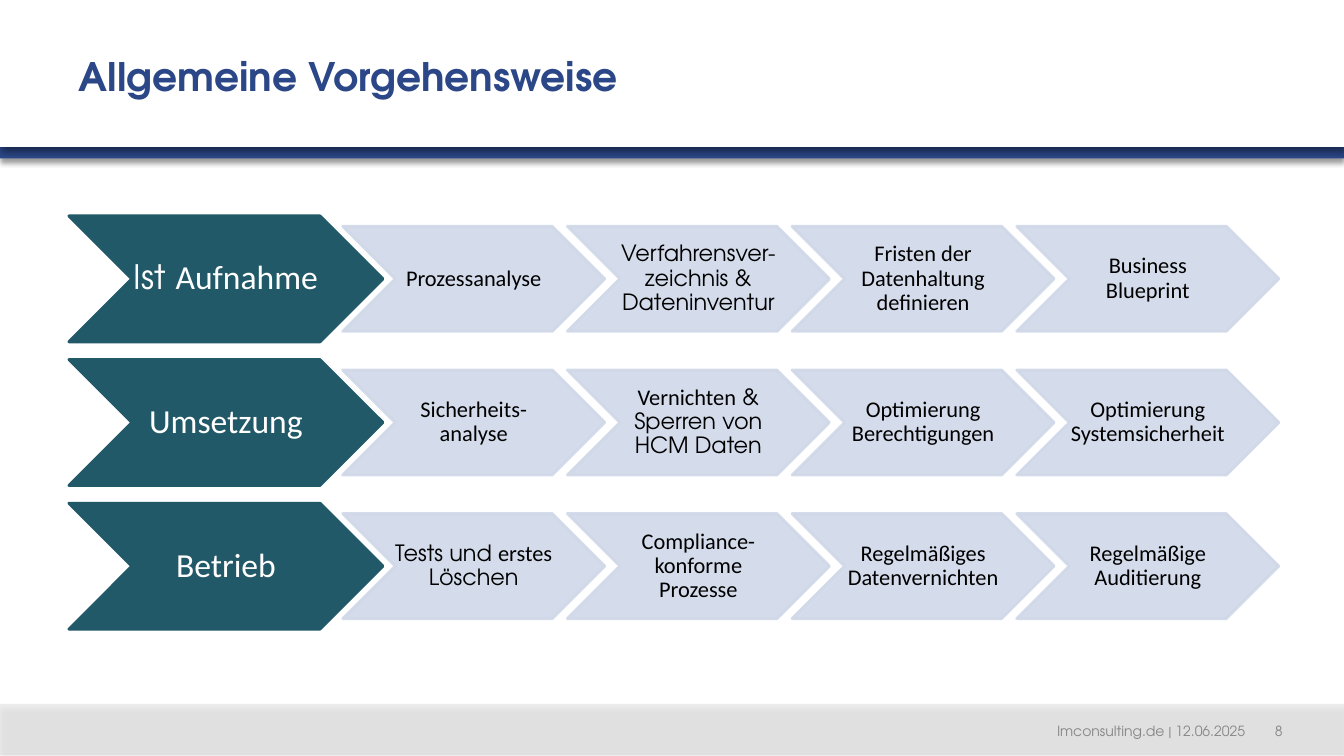
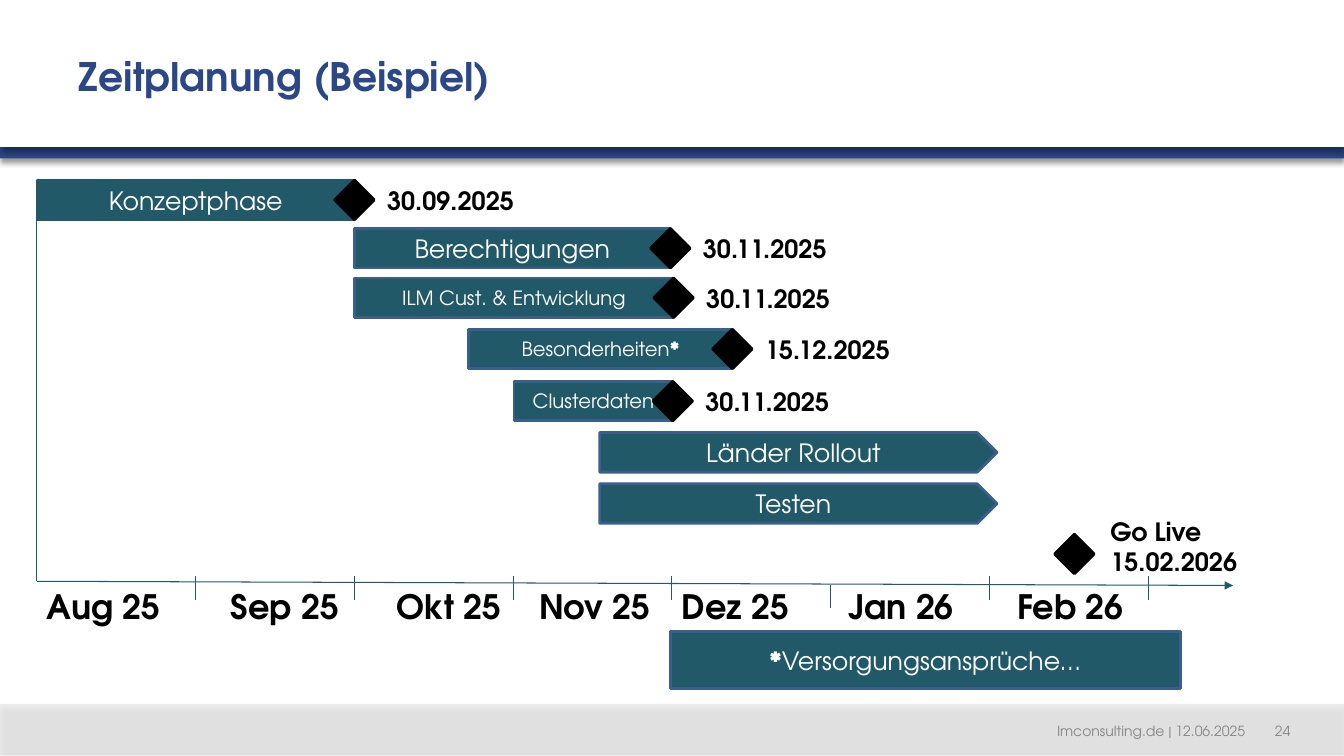
from lxml import etree
from pptx import Presentation
from pptx.dml.color import RGBColor
from pptx.enum.shapes import MSO_CONNECTOR, MSO_SHAPE
from pptx.enum.text import MSO_ANCHOR, MSO_AUTO_SIZE, PP_ALIGN
from pptx.oxml.ns import qn
from pptx.util import Emu, Pt

RECT, CHEVRON = MSO_SHAPE.RECTANGLE, MSO_SHAPE.CHEVRON
DIAMOND, PLATE = MSO_SHAPE.DIAMOND, MSO_SHAPE.PENTAGON
STRAIGHT = MSO_CONNECTOR.STRAIGHT
LEFT, CENTER = PP_ALIGN.LEFT, PP_ALIGN.CENTER
TOP, MIDDLE = MSO_ANCHOR.TOP, MSO_ANCHOR.MIDDLE
NO_FIT = MSO_AUTO_SIZE.NONE

COLS, ROWS, CELL = 160, 90, 76200
HEAD, BODY = "TeX Gyre Adventor", "Calibri"
COLORS = {"white": "FFFFFF", "black": "000000", "navy": "2B4787", "teal": "215968",
          "edge": "3A5F8C", "pale": "D0D8E8", "grey": "878787"}
BAR_H, MARK = 4.7, 4.7


def rgb(name):
    """Return the named colour."""
    return RGBColor.from_string(COLORS[name])


def cells(*values):
    """Turn grid cells into lengths."""
    return [Emu(round(v * CELL)) for v in values]


def child(parent, tag, **attrs):
    """Append a drawing element with its attributes."""
    el = etree.SubElement(parent, qn(tag))
    for key, value in attrs.items():
        el.set(key, str(value))
    return el


def write(tf, text, size=18, color="black", font=HEAD, bold=False, align=LEFT,
          anchor=MIDDLE, spacing=None, insets=None, tab=None):
    """Fill a text frame with a string or with (text, overrides) parts."""
    tf.word_wrap, tf.auto_size, tf.vertical_anchor = True, NO_FIT, anchor
    if insets is not None:
        tf.margin_left = tf.margin_right = tf.margin_top = tf.margin_bottom = Pt(insets)
    p = tf.paragraphs[0]
    p.alignment = align
    if spacing:
        p.line_spacing = spacing
    if tab:
        tabs = child(p._p.get_or_add_pPr(), "a:tabLst")
        child(tabs, "a:tab", pos=cells(tab)[0], algn="l")
    for part, extra in [(text, {})] if isinstance(text, str) else text:
        fmt = {"font": font, "bold": bold, **extra}
        r = p.add_run()
        r.text = part
        r.font.size, r.font.name, r.font.bold = Pt(size), fmt["font"], fmt["bold"]
        r.font.color.rgb = rgb(color)


class Deck:
    """Hold the style and the current slide."""

    def __init__(self):
        """Start an empty presentation on the grid."""
        self.prs = Presentation()
        self.prs.slide_width, self.prs.slide_height = cells(COLS, ROWS)
        self.layout = self.prs.slide_layouts[5]
        self.s = None

    def slide(self, title, number):
        """Add a slide with its title and footer."""
        first = not len(self.prs.slides)
        self.s = self.prs.slides.add_slide(self.layout)
        if first:
            self.bands()
        sp = self.s.shapes.title
        sp.left, sp.top, sp.width, sp.height = cells(8.2, 5.6, 108.7, 6.6)
        write(sp.text_frame, title, size=28, color="navy", bold=True, anchor=TOP)
        self.text(f"lmconsulting.de | 12.06.2025\t{number}", 124.7, 85.4, 35.3, 3.2,
                  size=10, color="grey", tab=25.9)

    def bands(self):
        """Put the shared bands behind the layout's placeholders."""
        bands = [(83.8, 6.1, "grey", 15), (17.4, 1.45, "navy", 100), (0, 17.5, "white", 100)]
        for i, (y, h, fill, alpha) in enumerate(bands):
            sp = self.shape(RECT, 0, y, COLS, h, fill, alpha=alpha)
            shadow = child(sp._element.spPr.find(qn("a:effectLst")), "a:outerShdw",
                           blurRad=Pt(4), dist=Pt(3), dir=90 * 60000, rotWithShape=0)
            child(child(shadow, "a:srgbClr", val=COLORS["black"]), "a:alpha", val=40000)
            sp._element.nvSpPr.cNvPr.set("id", str(100 + i))
            self.layout.shapes._spTree.insert(2 + i, sp._element)

    def shape(self, kind, x, y, w, h, fill, line=None, alpha=100, text=None, **fmt):
        """Add a filled preset shape, with text if given."""
        sp = self.s.shapes.add_shape(kind, *cells(x, y, w, h))
        sp.shadow.inherit = False
        sp.fill.solid()
        sp.fill.fore_color.rgb = rgb(fill)
        if line:
            sp.line.color.rgb, sp.line.width = rgb(line), Pt(2)
        else:
            sp.line.fill.background()
        if alpha < 100:
            for color in list(sp._element.spPr.iter(qn("a:srgbClr"))):
                child(color, "a:alpha", val=alpha * 1000)
        if text:
            write(sp.text_frame, text, align=CENTER, **fmt)
        return sp

    def text(self, text, x, y, w, h, **fmt):
        """Add a text box."""
        write(self.s.shapes.add_textbox(*cells(x, y, w, h)).text_frame, text, **fmt)

    def line(self, x1, y1, x2, y2, arrow=False):
        """Add a thin straight line."""
        c = self.s.shapes.add_connector(STRAIGHT, *cells(x1, y1, x2, y2))
        c.line.color.rgb, c.line.width = rgb("teal"), Pt(0.75)
        if arrow:
            child(c._element.spPr.find(qn("a:ln")), "a:tailEnd", type="triangle")
        child(c._element.spPr, "a:effectLst")

    def chevron(self, x, y, w, h, fill, text, **fmt):
        """Add a process step."""
        self.shape(CHEVRON, x, y, w, h, fill, fill, text=text, spacing=0.9, insets=0, **fmt)

    def bar(self, text, x, y, w, h=BAR_H, kind=RECT, edge="edge", size=18):
        """Add a labelled time bar."""
        self.shape(kind, x, y, w, h, "teal", edge, text=text, size=size, color="white")

    def milestone(self, x, y):
        """Add a diamond centred on a column."""
        self.shape(DIAMOND, x - MARK / 2, y, MARK, MARK, "black", "black")


def approach(deck):
    """Build the process slide."""
    deck.slide("Allgemeine Vorgehensweise", 8)
    head, body = {"font": HEAD}, {"font": BODY}
    phases = [
        ([("Ist ", head), ("Aufnahme", body)],
         ["Prozessanalyse", [("Verfahrensver-zeichnis & Dateninventur", head)],
          "Fristen der Datenhaltung definieren", "Business Blueprint"]),
        ("Umsetzung",
         ["Sicherheits-analyse", [("Vernichten", body), (" & Sperren von HCM Daten", head)],
          "Optimierung Berechtigungen", "Optimierung Systemsicherheit"]),
        ("Betrieb",
         [[("Tests und ", head), ("erstes", body), (" Löschen", head)],
          "Compliance-konforme Prozesse", "Regelmäßiges Datenvernichten",
          "Regelmäßige Auditierung"]),
    ]
    for row, (phase, steps) in enumerate(phases):
        y = 25.7 + 17.1 * row
        deck.chevron(8.2, y, 37.4, 15, "teal", phase, size=24, color="white", font=BODY)
        for col, step in enumerate(steps):
            deck.chevron(40.8 + 26.75 * col, y + 1.25, 31.2, 12.5, "pale", step,
                         size=16, font=BODY, alpha=90)


def schedule(deck):
    """Build the timeline slide."""
    deck.slide("Zeitplanung (Beispiel)", 24)
    star = ("*", {"bold": True})
    dated = [
        ("Konzeptphase", 4.4, 21.45, 37.8, 18, "teal", "30.09.2025"),
        ("Berechtigungen", 42.2, 27.2, 37.6, 18, "edge", "30.11.2025"),
        ("ILM Cust. & Entwicklung", 42.2, 33.1, 38, 14, "edge", "30.11.2025"),
        ([("Besonderheiten", {}), star], 55.8, 39.2, 31.4, 14, "edge", "15.12.2025"),
        ("Clusterdaten", 61.2, 45.4, 18.9, 14, "edge", "30.11.2025"),
    ]
    for text, x, y, w, size, edge, date in dated:
        deck.bar(text, x, y, w, edge=edge, size=size)
        deck.milestone(x + w, y)
        deck.text(date, x + w + 2.7, y, 18, 4.8, bold=True)
    for text, y in [("Länder Rollout", 51.5), ("Testen", 57.6)]:
        deck.bar(text, 71.4, y, 47.3, kind=PLATE)
    deck.milestone(127.9, 63.6)
    deck.text("Go Live 15.02.2026", 131, 60.8, 18.2, 8.5, bold=True)

    deck.line(4.4, 69.2, 4.4, 21.5)
    deck.line(4.4, 69.2, 146.8, 69.7, arrow=True)
    months = [("Aug 25", 4.4, 68.6), ("Sep 25", 26.3, 68.6), ("Okt 25", 46, 68.6),
              ("Nov 25", 63, 68.6), ("Dez 25", 80, 69.6), ("Jan 26", 99.8, 68.6),
              ("Feb 26", 119.9, 68.6)]
    for i, (month, x, tick) in enumerate(months):
        deck.text(month, x, 69.2, 18, 6, size=24, bold=True)
        end = 23.3 + 18.9 * i
        deck.line(end, tick, end, tick + 2.8)
    deck.bar([star, ("Versorgungsansprüche…", {})], 79.8, 75.2, 60.7, h=6.8)


def main():
    """Build and save the presentation."""
    deck = Deck()
    approach(deck)
    schedule(deck)
    deck.prs.save("out.pptx")


if __name__ == "__main__":
    main()
